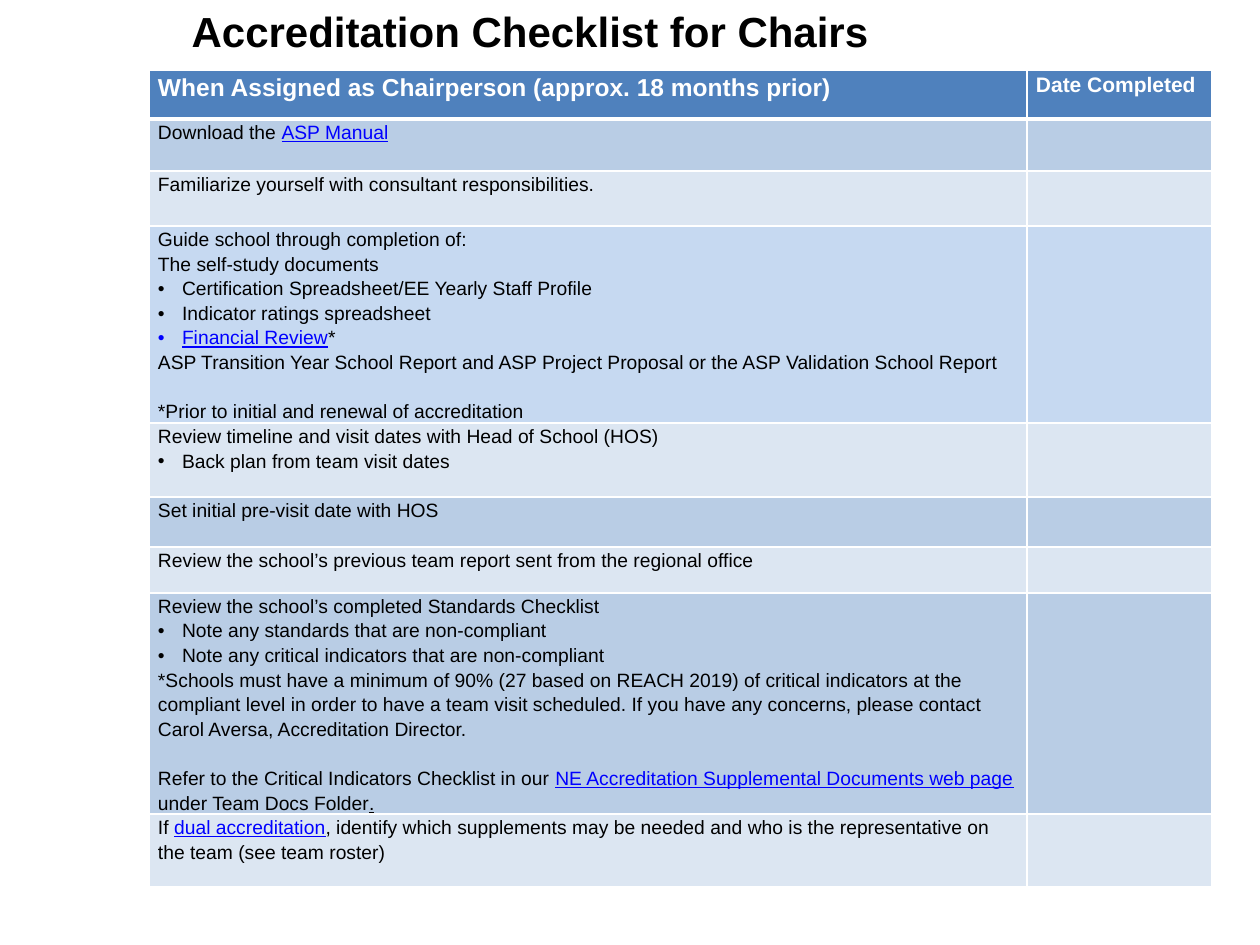
from dataclasses import dataclass

from lxml.etree import SubElement
from pptx import Presentation
from pptx.dml.color import RGBColor
from pptx.enum.text import MSO_ANCHOR, PP_ALIGN
from pptx.oxml.ns import qn
from pptx.util import Pt

PX = 914400 // 126
FONT = "Arial"
BLACK = RGBColor(0x00, 0x00, 0x00)
WHITE = RGBColor(0xFF, 0xFF, 0xFF)
LINK_BLUE = RGBColor(0x00, 0x00, 0xFF)
HEADER_BLUE = RGBColor(0x4F, 0x81, 0xBD)
MID_BLUE = RGBColor(0xB9, 0xCD, 0xE5)
PALE_BLUE = RGBColor(0xDC, 0xE6, 0xF2)
GUIDE_BLUE = RGBColor(0xC6, 0xD9, 0xF1)

COLUMN_WIDTHS = (878, 185)
HEADER_HEIGHT = 49
HEADINGS = (("When Assigned as Chairperson (approx. 18 months prior)", 14),
            ("Date Completed", 12))
INDENT = 24
LINE_SPACING = 1.15
LINE_GAP = 14


@dataclass
class Run:
    text: str
    color: RGBColor = BLACK
    underline: bool = False


@dataclass
class Line:
    runs: list
    bullet: bool = False
    gap: int = 0


def plain(text, gap=0):
    return Line([Run(text)], gap=gap)


def bullet(text):
    return Line([Run(text)], bullet=True)


def link(text):
    return Run(text, LINK_BLUE, True)


# Each task: row height, fill, lines of text
TASKS = [
    (52, MID_BLUE, [Line([Run("Download the "), link("ASP Manual")])]),
    (55, PALE_BLUE, [plain("Familiarize yourself with consultant responsibilities.")]),
    (197, GUIDE_BLUE, [
        plain("Guide school through completion of:"),
        plain("The self-study documents"),
        bullet("Certification Spreadsheet/EE Yearly Staff Profile"),
        bullet("Indicator ratings spreadsheet"),
        Line([link("Financial Review"), Run("*")], bullet=True),
        plain("ASP Transition Year School Report and ASP Project Proposal "
              "or the ASP Validation School Report"),
        plain("*Prior to initial and renewal of accreditation", LINE_GAP),
    ]),
    (74, PALE_BLUE, [
        plain("Review timeline and visit dates with Head of School (HOS)"),
        bullet("Back plan from team visit dates"),
    ]),
    (50, MID_BLUE, [plain("Set initial pre-visit date with HOS")]),
    (46, PALE_BLUE, [
        plain("Review the school’s previous team report sent from the regional office"),
    ]),
    (221, MID_BLUE, [
        plain("Review the school’s completed Standards Checklist"),
        bullet("Note any standards that are non-compliant"),
        bullet("Note any critical indicators that are non-compliant"),
        plain("*Schools must have a minimum of 90% (27 based on REACH 2019) of critical "
              "indicators at the compliant level in order to have a team visit scheduled. "
              "If you have any concerns, please contact Carol Aversa, Accreditation Director."),
        Line([
            Run("Refer to the Critical Indicators Checklist in our "),
            link("NE Accreditation Supplemental Documents web page "),
            Run("under Team Docs Folder"),
            Run(".", underline=True),
        ], gap=LINE_GAP),
    ]),
    (73, PALE_BLUE, [
        Line([
            Run("If "),
            link("dual accreditation"),
            Run(", identify which supplements may be needed and who is the "
                "representative on the team (see team roster)"),
        ]),
    ]),
]


def format_font(font, size, color, bold=False, underline=False):
    font.name = FONT
    font.size = Pt(size)
    font.color.rgb = color
    font.bold = bold
    font.underline = underline


def add_title(slide, text):
    title = slide.shapes.title
    title.left, title.top, title.width, title.height = (
        179 * PX, -1 * PX, 1018 * PX, 86 * PX)
    frame = title.text_frame
    frame.text = text
    frame.vertical_anchor = MSO_ANCHOR.TOP
    paragraph = frame.paragraphs[0]
    paragraph.alignment = PP_ALIGN.LEFT
    format_font(paragraph.runs[0].font, 24, BLACK, bold=True)


def add_border(cell, side, width):
    properties = cell._tc.get_or_add_tcPr()
    line = SubElement(properties, qn(f"a:ln{side}"), w=str(Pt(width)))
    fill = SubElement(line, qn("a:solidFill"))
    SubElement(fill, qn("a:srgbClr"), val=str(WHITE))


def style_cell(cell, color, top=1, bottom=1):
    for side, width in (("L", 1), ("R", 1), ("T", top), ("B", bottom)):
        add_border(cell, side, width)
    cell.fill.solid()
    cell.fill.fore_color.rgb = color
    cell.margin_left = cell.margin_right = 9 * PX
    cell.margin_top = cell.margin_bottom = 0


def add_bullet(paragraph):
    properties = paragraph._p.get_or_add_pPr()
    properties.set("marL", str(INDENT * PX))
    properties.set("indent", str(-INDENT * PX))
    SubElement(properties, qn("a:buFont"), typeface=FONT)
    SubElement(properties, qn("a:buChar"), char="•")


def write_lines(cell, lines, size=11, bold=False):
    frame = cell.text_frame
    for index, line in enumerate(lines):
        paragraph = frame.add_paragraph() if index else frame.paragraphs[0]
        if line.bullet:
            add_bullet(paragraph)
        paragraph.line_spacing = LINE_SPACING
        if line.gap:
            paragraph.space_before = Pt(line.gap)
        for item in line.runs:
            run = paragraph.add_run()
            run.text = item.text
            format_font(run.font, size, item.color, bold, item.underline)


def add_checklist(slide):
    heights = [HEADER_HEIGHT] + [height for height, _, _ in TASKS]
    table = slide.shapes.add_table(
        len(heights), len(COLUMN_WIDTHS), 149 * PX, 70 * PX,
        sum(COLUMN_WIDTHS) * PX, sum(heights) * PX).table
    table.horz_banding = False
    for column, width in zip(table.columns, COLUMN_WIDTHS):
        column.width = width * PX
    for row, height in zip(table.rows, heights):
        row.height = height * PX
    for cell, (heading, size) in zip(table.rows[0].cells, HEADINGS):
        style_cell(cell, HEADER_BLUE, bottom=3)
        write_lines(cell, [Line([Run(heading, WHITE)])], size, bold=True)
    for index, (_, color, lines) in enumerate(TASKS, start=1):
        for cell in table.rows[index].cells:
            style_cell(cell, color, top=3 if index == 1 else 1)
        write_lines(table.cell(index, 0), lines)


def main():
    presentation = Presentation()
    presentation.slide_width = 1260 * PX
    presentation.slide_height = 945 * PX
    slide = presentation.slides.add_slide(presentation.slide_layouts[5])
    add_title(slide, "Accreditation Checklist for Chairs")
    add_checklist(slide)
    presentation.save("out.pptx")


if __name__ == "__main__":
    main()
